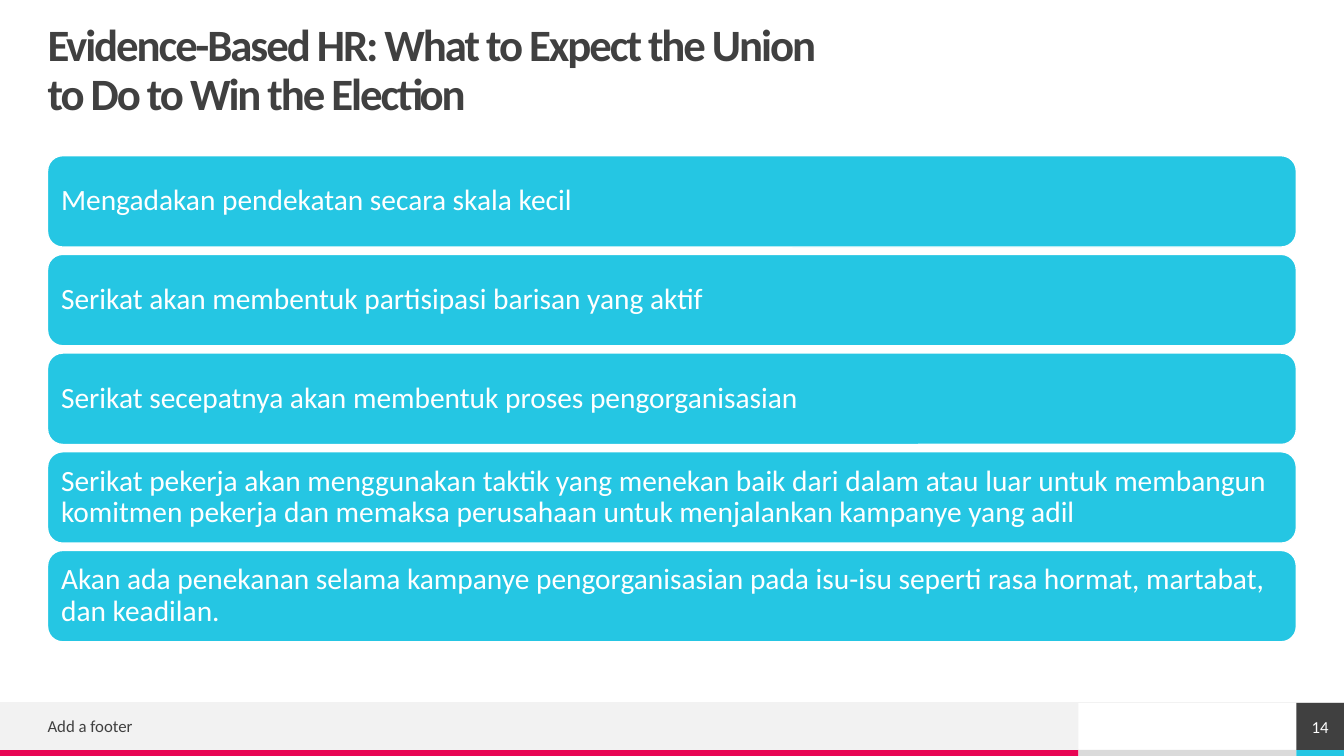
import pptx
import pptx.util
import pptx.oxml
import pptx.dml.color
import pptx.enum.shapes
import pptx.enum.text

TITLE = "Evidence-Based HR: What to Expect the Union\vto Do to Win the Election"
TACTICS = [
    "Mengadakan pendekatan secara skala kecil",
    "Serikat akan membentuk partisipasi barisan yang aktif",
    "Serikat secepatnya akan membentuk proses pengorganisasian",
    "Serikat pekerja akan menggunakan taktik yang menekan baik dari dalam atau luar untuk membangun komitmen pekerja dan memaksa perusahaan untuk menjalankan kampanye yang adil",
    "Akan ada penekanan selama kampanye pengorganisasian pada isu-isu seperti rasa hormat, martabat, dan keadilan.",
]
FOOTER = "Add a footer"
SLIDE_NUMBER = "14"

FONT = "Calibri"
CYAN, PINK, DARK, WHITE = "25C6E3", "E80554", "404040", "FFFFFF"
PALE, GREY = "F2F2F2", "DADADA"

WIDTH, HEIGHT = 960, 540
MARGIN = 34
CONTENT_WIDTH = WIDTH - 2 * MARGIN
BAR_TOP, BAR_HEIGHT, BAR_PITCH = 111.2, 65.3, 70.5
FOOTER_TOP, STRIP_TOP = 502, 535.7
FOOTER_HEIGHT, STRIP_HEIGHT = STRIP_TOP - FOOTER_TOP, HEIGHT - STRIP_TOP
FOOTER_RIGHT, NUMBER_LEFT = 770.4, WIDTH - MARGIN

Pt = pptx.util.Pt
SHAPES = pptx.enum.shapes.MSO_SHAPE
ALIGN = pptx.enum.text.PP_ALIGN


def color(value):
    return pptx.dml.color.RGBColor.from_string(value)


def write(shape, text, size, font_color, align=ALIGN.LEFT, inset=0,
          line_spacing=1.0, bold=False, spacing=0):
    frame = shape.text_frame
    frame.text = text
    frame.word_wrap = True
    frame.auto_size = pptx.enum.text.MSO_AUTO_SIZE.NONE
    frame.vertical_anchor = pptx.enum.text.MSO_ANCHOR.MIDDLE
    frame.margin_left = frame.margin_top = frame.margin_right = frame.margin_bottom = Pt(inset)
    paragraph = frame.paragraphs[0]
    paragraph.alignment = align
    paragraph.line_spacing = line_spacing
    for run in paragraph.runs:
        run.font.name = FONT
        run.font.size = Pt(size)
        run.font.bold = bold
        run.font.color.rgb = color(font_color)
        if spacing:
            run.font._element.set("spc", str(round(spacing * 100)))


def add_block(slide, kind, left, top, width, height, fill, line=None):
    shape = slide.shapes.add_shape(kind, Pt(left), Pt(top), Pt(width), Pt(height))
    shape.shadow.inherit = False
    shape.fill.solid()
    shape.fill.fore_color.rgb = color(fill)
    if line:
        shape.line.color.rgb = color(line)
        shape.line.width = Pt(1)
    else:
        shape.line.fill.background()
    return shape


def add_footer(slide):
    for left, right, fill in [
        (0, FOOTER_RIGHT, PINK),
        (FOOTER_RIGHT, NUMBER_LEFT, GREY),
        (NUMBER_LEFT, WIDTH, CYAN),
    ]:
        add_block(slide, SHAPES.RECTANGLE, left, STRIP_TOP, right - left, STRIP_HEIGHT, fill)
    add_block(slide, SHAPES.RECTANGLE, 0, FOOTER_TOP, FOOTER_RIGHT, FOOTER_HEIGHT, PALE)

    rule = slide.shapes.add_connector(
        pptx.enum.shapes.MSO_CONNECTOR.STRAIGHT, Pt(WIDTH), Pt(FOOTER_TOP), Pt(0), Pt(FOOTER_TOP))
    rule.line.color.rgb = color(PALE)
    rule.line.width = Pt(0.5)
    rule._element.spPr.append(pptx.oxml.parse_xml(
        '<a:effectLst xmlns:a="http://schemas.openxmlformats.org/drawingml/2006/main"/>'))

    footer = slide.shapes.add_textbox(Pt(MARGIN), Pt(507), Pt(446), Pt(23))
    write(footer, FOOTER, 12, DARK)
    number = add_block(slide, SHAPES.RECTANGLE, NUMBER_LEFT, FOOTER_TOP, MARGIN, FOOTER_HEIGHT, DARK)
    write(number, SLIDE_NUMBER, 12, WHITE, ALIGN.CENTER)


def main():
    presentation = pptx.Presentation()
    presentation.slide_width, presentation.slide_height = Pt(WIDTH), Pt(HEIGHT)
    slide = presentation.slides.add_slide(presentation.slide_layouts[5])

    title = slide.shapes.title
    title.left, title.top, title.width, title.height = map(Pt, (MARGIN, MARGIN, CONTENT_WIDTH, 34))
    write(title, TITLE, 32, DARK, line_spacing=0.9, bold=True, spacing=-1.5)

    for index, tactic in enumerate(TACTICS):
        bar = add_block(slide, SHAPES.ROUNDED_RECTANGLE, MARGIN, BAR_TOP + index * BAR_PITCH,
                        CONTENT_WIDTH, BAR_HEIGHT, CYAN, WHITE)
        write(bar, tactic, 21, WHITE, inset=6.5, line_spacing=0.9)

    add_footer(slide)
    presentation.save("out.pptx")


if __name__ == "__main__":
    main()
